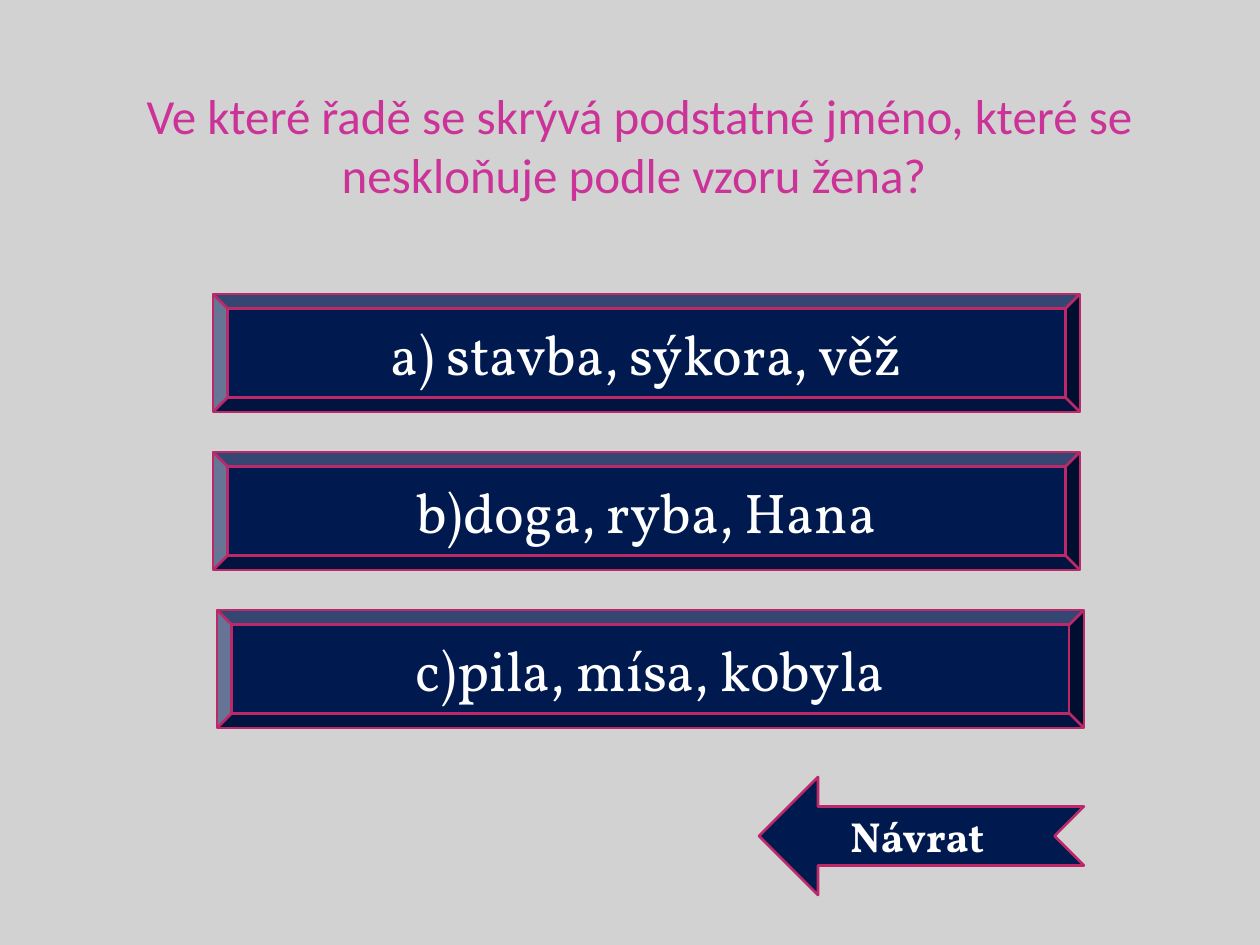
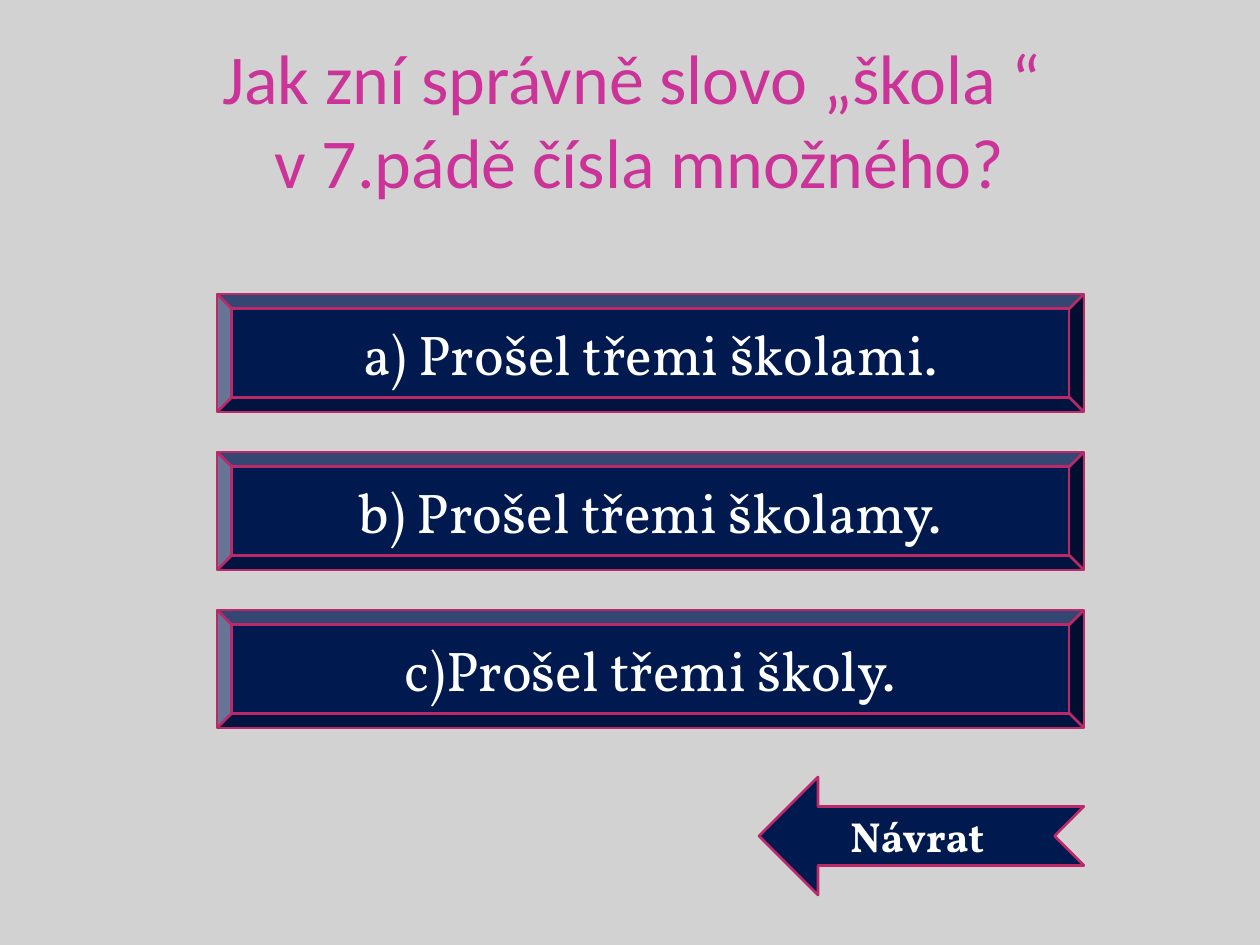
import copy

import pptx
import pptx.dml.color
import pptx.enum.shapes
import pptx.enum.text
import pptx.oxml.ns
import pptx.util

PX = 914400 // 126  # EMU in one px
SLIDE_SIZE = (1260, 945)
TITLE_BOX = (123, 45, 1033, 158)
ANSWER_TOP, ANSWER_STEP = 294, 158
ANSWER_WIDTH, BUTTON_HEIGHT = 867, 118
ANSWER_LEFT, ANSWER_LEFT_OUTER = 217, 213
RETURN_BOX = (759, 777, 325, BUTTON_HEIGHT)

BACKGROUND, NAVY, PINK, MAGENTA, WHITE = "D2D2D2", "001A4F", "BD2968", "CC3399", "FFFFFF"
ANSWER_FONT = {"name": "Vollkorn", "size": pptx.util.Pt(32), "bold": False}
RETURN_FONT = {"name": "Vollkorn", "size": pptx.util.Pt(24), "bold": True}
TITLE_FRAME = {
    "word_wrap": True,
    "auto_size": pptx.enum.text.MSO_AUTO_SIZE.NONE,
    "vertical_anchor": pptx.enum.text.MSO_ANCHOR.BOTTOM,
    "margin_left": 0, "margin_top": pptx.util.Inches(0.05),
    "margin_right": 0, "margin_bottom": 0,
}
BUTTON_FRAME = {"word_wrap": True, "vertical_anchor": pptx.enum.text.MSO_ANCHOR.MIDDLE}

# Question, its size in points, answers with their left edges
QUESTIONS = [
    ("Ve které řadě se skrývá podstatné jméno, které se neskloňuje podle vzoru žena? ", 28,
     [("a) stavba, sýkora, věž", ANSWER_LEFT_OUTER),
      ("b)doga, ryba, Hana", ANSWER_LEFT_OUTER),
      ("c)pila, mísa, kobyla", ANSWER_LEFT)]),
    ("Jak zní správně slovo „škola “ \vv 7.pádě čísla množného?", 40,
     [("a) Prošel třemi školami.", ANSWER_LEFT),
      ("b) Prošel třemi školamy.", ANSWER_LEFT),
      ("c)Prošel třemi školy.", ANSWER_LEFT)]),
]


def paint(colour_format, hex_colour):
    colour_format.rgb = pptx.dml.color.RGBColor.from_string(hex_colour)


def apply(target, values):
    for name, value in values.items():
        setattr(target, name, value)


def write(frame, text, frame_format, font_format, colour):
    """Fill a frame with one centred paragraph."""
    apply(frame, frame_format)
    paragraph = frame.paragraphs[0]
    paragraph.text = text
    paragraph.alignment = pptx.enum.text.PP_ALIGN.CENTER
    for run in paragraph.runs:
        apply(run.font, font_format)
        paint(run.font.color, colour)
    # Line breaks take the run's size, so that line heights agree
    properties = paragraph.runs[0].font._element
    for line_break in paragraph._p.findall(pptx.oxml.ns.qn("a:br")):
        line_break.append(copy.deepcopy(properties))


def add_question(slide, text, points):
    title = slide.shapes.title
    edges = ("left", "top", "width", "height")
    apply(title, {edge: px * PX for edge, px in zip(edges, TITLE_BOX)})
    font_format = {"name": "Calibri", "size": pptx.util.Pt(points), "bold": False}
    write(title.text_frame, text, TITLE_FRAME, font_format, MAGENTA)


def add_button(slide, preset, box, text, font_format):
    button = slide.shapes.add_shape(preset, *(px * PX for px in box))
    button.shadow.inherit = False
    button.fill.solid()
    paint(button.fill.fore_color, NAVY)
    paint(button.line.color, PINK)
    button.line.width = pptx.util.Pt(1.5)
    write(button.text_frame, text, BUTTON_FRAME, font_format, WHITE)
    return button


def add_return_arrow(slide):
    preset = pptx.enum.shapes.MSO_SHAPE.NOTCHED_RIGHT_ARROW
    arrow = add_button(slide, preset, RETURN_BOX, "Návrat ", RETURN_FONT)
    arrow._element.spPr.find(pptx.oxml.ns.qn("a:xfrm")).set("flipH", "1")


def main():
    quiz = pptx.Presentation()
    quiz.slide_width, quiz.slide_height = (px * PX for px in SLIDE_SIZE)

    # Shared background
    background = quiz.slide_master.background.fill
    background.solid()
    paint(background.fore_color, BACKGROUND)

    # One slide for each question
    for question, points, answers in QUESTIONS:
        slide = quiz.slides.add_slide(quiz.slide_layouts[5])
        add_question(slide, question, points)
        for row, (answer, left) in enumerate(answers):
            box = (left, ANSWER_TOP + row * ANSWER_STEP, ANSWER_WIDTH, BUTTON_HEIGHT)
            add_button(slide, pptx.enum.shapes.MSO_SHAPE.BEVEL, box, answer, ANSWER_FONT)
        add_return_arrow(slide)

    quiz.save("out.pptx")


if __name__ == "__main__":
    main()
